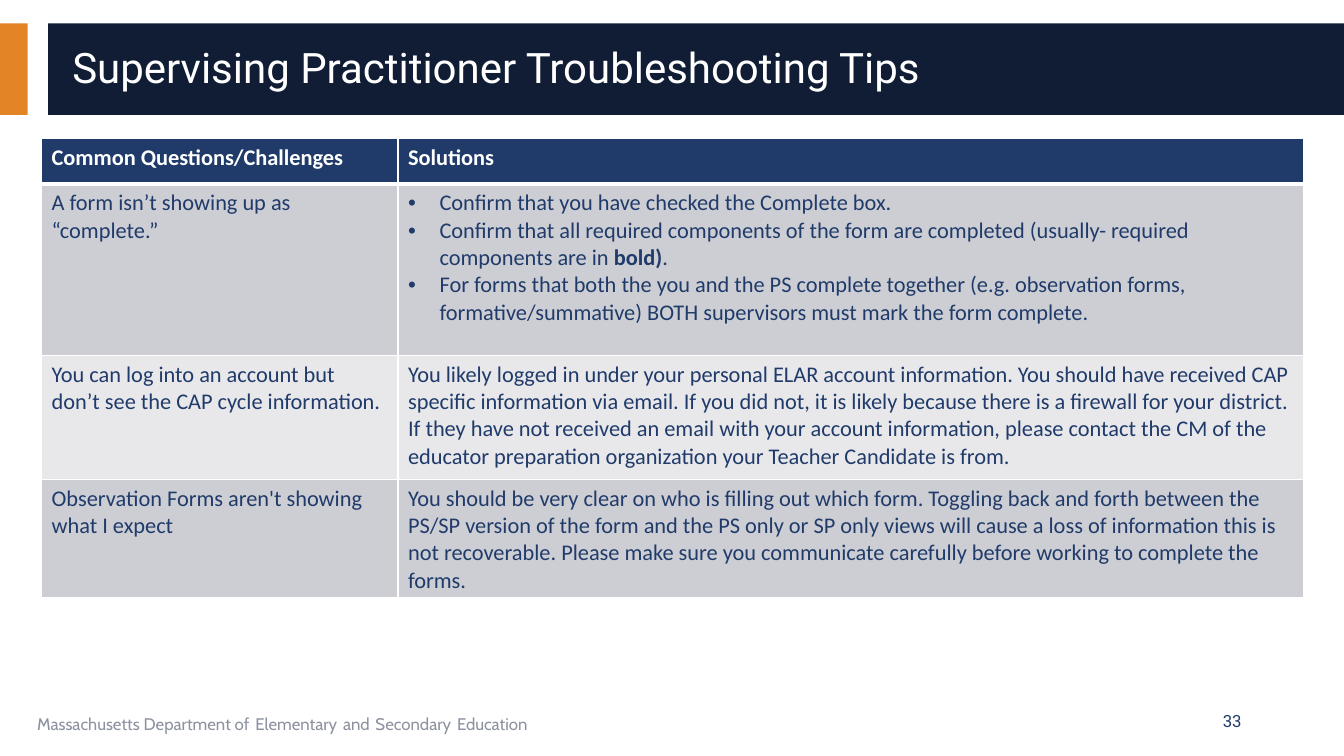
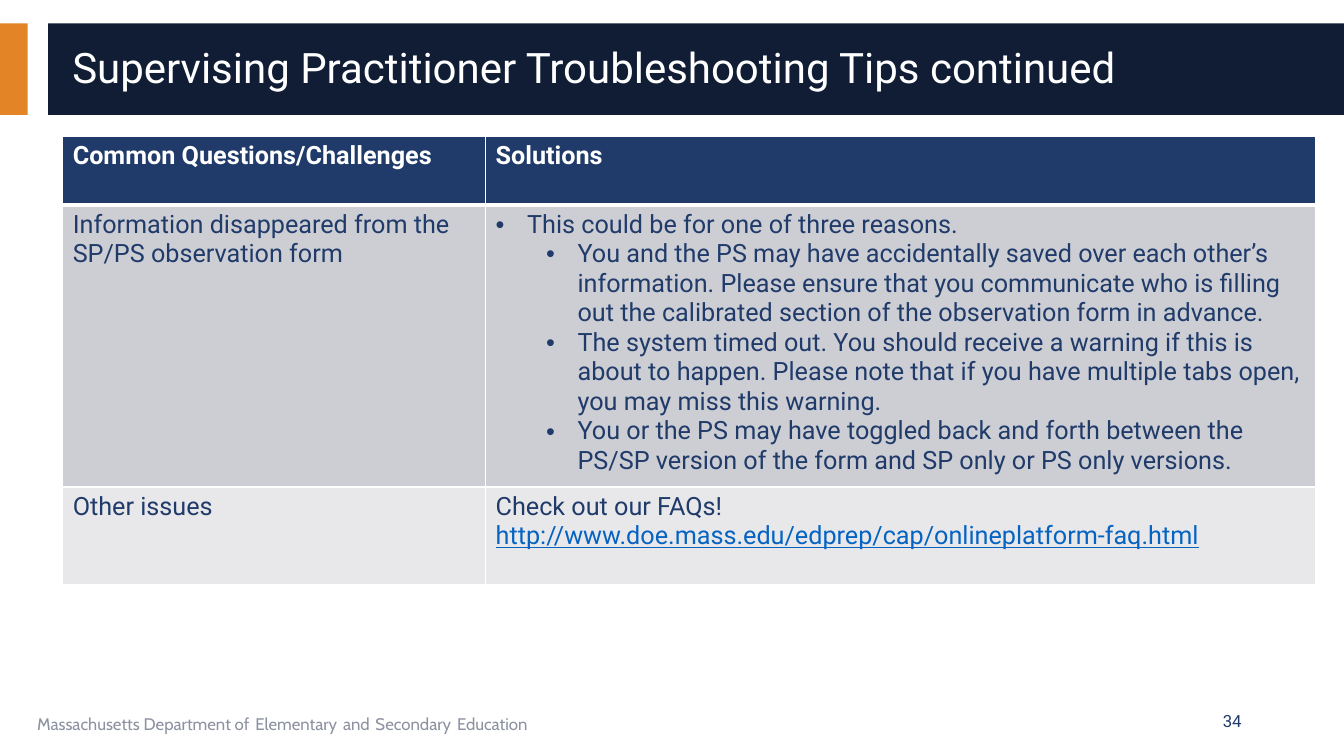
from dataclasses import dataclass
from typing import NamedTuple

from lxml.etree import SubElement
from pptx import Presentation
from pptx.dml.color import RGBColor
from pptx.enum.shapes import MSO_SHAPE as Preset
from pptx.enum.text import MSO_ANCHOR as Anchor, PP_ALIGN as Align
from pptx.oxml.ns import qn
from pptx.slide import Slide
from pptx.table import _Cell as Cell
from pptx.text.text import Font, TextFrame, _Paragraph as Paragraph
from pptx.util import Pt


@dataclass(frozen=True)
class Theme:
    accent: str = "E38526"
    band: str = "101D35"
    navy: str = "203B6A"
    white: str = "FFFFFF"
    footer: str = "8D92A1"
    link: str = "0563C1"
    row_fills: tuple[str, str] = ("CDCED4", "E8E8EB")
    font: str = "Roboto"
    footer_font: str = "Cabin"
    title_size: float = 30
    small_size: float = 12
    footer_gap_size: float = 18
    rule: float = 1
    header_rule: float = 3


THEME = Theme()
INDENT = 22.5
LEVEL_STEP = 36


class Box(NamedTuple):
    left: float
    top: float
    width: float
    height: float


class Span(NamedTuple):
    text: str
    bold: bool = False
    link: bool = False


class Para(NamedTuple):
    spans: tuple[Span, ...]
    level: int | None = None  # bullet level, None for plain text


class Row(NamedTuple):
    height: float
    challenge: str
    solutions: tuple[Para, ...]


@dataclass(frozen=True)
class TipsSlide:
    title: str
    number: int
    left: float
    top: float
    columns: tuple[float, float]
    header_height: float
    font: str
    size: float
    rows: tuple[Row, ...]


def plain(text: str, level: int | None = None) -> Para:
    return Para((Span(text),), level)


TIPS = (
    TipsSlide(
        "Supervising Practitioner Troubleshooting Tips", 33,
        left=29.7, top=99.2, columns=(254.6, 647), header_height=32.4,
        font="Calibri", size=16,
        rows=(
            Row(122.4, "A form isn’t showing up as “complete.”", (
                plain("Confirm that you have checked the Complete box.", 0),
                Para((
                    Span("Confirm that all required components of the form are completed "
                         "(usually- required components are in "),
                    Span("bold)", bold=True),
                    Span("."),
                ), 0),
                plain("For forms that both the you and the PS complete together (e.g. "
                      "observation forms, formative/summative) BOTH supervisors must mark "
                      "the form complete.", 0),
            )),
            Row(88.6, "You can log into an account but don’t see the CAP cycle information.", (
                plain("You likely logged in under your personal ELAR account information. "
                      "You should have received CAP specific information via email. If you "
                      "did not, it is likely because there is a firewall for your district. "
                      "If they have not received an email with your account information, "
                      "please contact the CM of the educator preparation organization your "
                      "Teacher Candidate is from."),
            )),
            Row(83.5, "Observation Forms aren't showing what I expect", (
                plain("You should be very clear on who is filling out which form. Toggling "
                      "back and forth between the PS/SP version of the form and the PS only "
                      "or SP only views will cause a loss of information this is not "
                      "recoverable. Please make sure you communicate carefully before "
                      "working to complete the forms."),
            )),
        ),
    ),
    TipsSlide(
        "Supervising Practitioner Troubleshooting Tips continued", 34,
        left=44.8, top=97.2, columns=(302.1, 593), header_height=49,
        font="Roboto", size=18,
        rows=(
            Row(197.4, "Information disappeared from the SP/PS observation form", (
                plain("This could be for one of three reasons.", 0),
                plain("You and the PS may have accidentally saved over each other’s "
                      "information. Please ensure that you communicate who is filling out "
                      "the calibrated section of the observation form in advance.", 1),
                plain("The system timed out. You should receive a warning if this is about "
                      "to happen. Please note that if you have multiple tabs open, you may "
                      "miss this warning.", 1),
                plain("You or the PS may have toggled back and forth between the PS/SP "
                      "version of the form and SP only or PS only versions.", 1),
            )),
            Row(70, "Other issues", (
                Para((
                    Span("Check out our FAQs! "),
                    Span("http://www.doe.mass.edu/edprep/cap/onlineplatform-faq.html",
                         link=True),
                )),
            )),
        ),
    ),
)


def style(font: Font, name: str, size: float, color: str, bold: bool = False) -> None:
    font.name, font.size, font.bold = name, Pt(size), bold
    font.color.rgb = RGBColor.from_string(color)


def add_band(slide: Slide, box: Box, color: str) -> None:
    band = slide.shapes.add_shape(Preset.RECTANGLE, *map(Pt, box))
    band.shadow.inherit = False
    band.fill.solid()
    band.fill.fore_color.rgb = RGBColor.from_string(color)
    band.line.fill.background()


def add_text_frame(slide: Slide, box: Box, anchor: Anchor = Anchor.MIDDLE) -> TextFrame:
    frame = slide.shapes.add_textbox(*map(Pt, box)).text_frame
    frame.word_wrap = True
    frame.vertical_anchor = anchor
    return frame


def add_footer(slide: Slide) -> None:
    """Write the department name, with wider gaps between its last words."""
    footer = add_text_frame(slide, Box(19.4, 500.4, 607.7, 28.8), Anchor.TOP).paragraphs[0]
    footer.font.name = THEME.footer_font
    phrases = ("Massachusetts Department of", "Elementary", "and", "Secondary", "Education")
    for index, phrase in enumerate(phrases):
        if index:
            gap = footer.add_run()
            gap.text = " "
            style(gap.font, THEME.footer_font, THEME.footer_gap_size, THEME.navy)
        words = footer.add_run()
        words.text = phrase
        style(words.font, THEME.footer_font, THEME.small_size, THEME.footer)


def add_frame(slide: Slide, title: str, number: int) -> None:
    """Draw the bands, title, footer and page number that every slide has."""
    add_band(slide, Box(0, 16.7, 19.8, 65.4), THEME.accent)
    add_band(slide, Box(34.4, 16.7, 925.6, 65.4), THEME.band)
    heading = add_text_frame(slide, Box(44.6, 23, 895.7, 53.3)).paragraphs[0]
    heading.text = title
    heading.line_spacing = 0.9
    style(heading.font, THEME.font, THEME.title_size, THEME.white)
    add_footer(slide)
    page = add_text_frame(slide, Box(678, 500.4, 216, 28.8)).paragraphs[0]
    page.text = str(number)
    page.alignment = Align.RIGHT
    style(page.font, THEME.font, THEME.small_size, THEME.navy)


def add_bullet(paragraph: Paragraph, level: int) -> None:
    paragraph.level = level
    properties = paragraph._p.get_or_add_pPr()
    properties.set("marL", str(Pt(INDENT + level * LEVEL_STEP)))
    properties.set("indent", str(-Pt(INDENT)))
    SubElement(properties, qn("a:buFont"), typeface="Arial")
    SubElement(properties, qn("a:buChar"), char="•")


def paint_cell(cell: Cell, fill: str, top: float, bottom: float) -> None:
    """Give a cell white borders and a plain fill."""
    properties = cell._tc.get_or_add_tcPr()
    widths = {"lnL": THEME.rule, "lnR": THEME.rule, "lnT": top, "lnB": bottom}
    for side, width in widths.items():
        line = SubElement(properties, qn(f"a:{side}"), w=str(Pt(width)))
        paint = SubElement(line, qn("a:solidFill"))
        SubElement(paint, qn("a:srgbClr"), val=THEME.white)
    cell.fill.solid()
    cell.fill.fore_color.rgb = RGBColor.from_string(fill)


def write_cell(cell: Cell, paras: tuple[Para, ...], tips: TipsSlide,
               color: str, bold: bool = False) -> None:
    frame = cell.text_frame
    for index, para in enumerate(paras):
        paragraph = frame.add_paragraph() if index else frame.paragraphs[0]
        if para.level is not None:
            add_bullet(paragraph, para.level)
        style(paragraph.font, tips.font, tips.size, color, bold)
        for span in para.spans:
            run = paragraph.add_run()
            run.text = span.text
            if span.bold:
                run.font.bold = True
            if span.link:
                run.font.underline = True
                run.font.color.rgb = RGBColor.from_string(THEME.link)


def add_tips_table(slide: Slide, tips: TipsSlide) -> None:
    header = Row(tips.header_height, "Common Questions/Challenges", (plain("Solutions"),))
    rows = (header, *tips.rows)
    box = Box(tips.left, tips.top, sum(tips.columns), sum(row.height for row in rows))
    table = slide.shapes.add_table(len(rows), len(tips.columns), *map(Pt, box)).table
    for column, width in zip(table.columns, tips.columns):
        column.width = Pt(width)
    for index, row in enumerate(rows):
        table.rows[index].height = Pt(row.height)
        is_header = index == 0
        fill = THEME.navy if is_header else THEME.row_fills[(index - 1) % 2]
        color = THEME.white if is_header else THEME.navy
        top = THEME.header_rule if index == 1 else THEME.rule
        bottom = THEME.header_rule if is_header else THEME.rule
        for column, paras in enumerate(((plain(row.challenge),), row.solutions)):
            cell = table.cell(index, column)
            paint_cell(cell, fill, top, bottom)
            write_cell(cell, paras, tips, color, is_header)


def main() -> None:
    deck = Presentation()
    deck.slide_width, deck.slide_height = Pt(960), Pt(540)
    blank = deck.slide_layouts[6]
    for tips in TIPS:
        slide = deck.slides.add_slide(blank)
        add_frame(slide, tips.title, tips.number)
        add_tips_table(slide, tips)
    deck.save("out.pptx")


if __name__ == "__main__":
    main()
